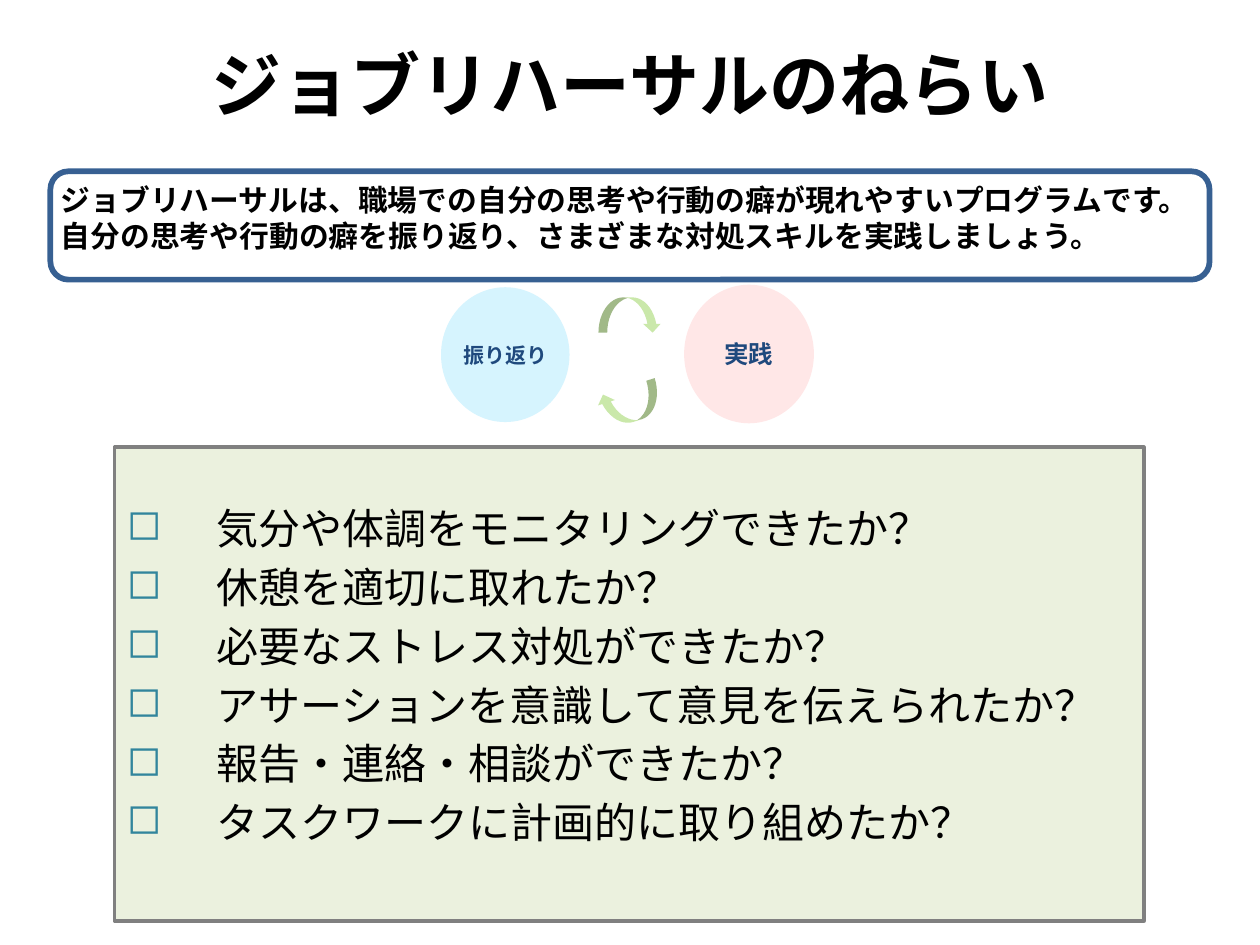
"""Build the job rehearsal aims slide."""
from dataclasses import dataclass

from lxml.etree import SubElement
from pptx import Presentation
from pptx.dml.color import RGBColor
from pptx.enum.shapes import MSO_SHAPE
from pptx.enum.text import MSO_ANCHOR, PP_ALIGN
from pptx.oxml.ns import qn
from pptx.util import Inches, Pt


@dataclass(frozen=True)
class Theme:
    font: str = "Noto Sans CJK JP"
    ink: str = "000000"
    navy: str = "1F497D"
    frame: str = "376092"
    white: str = "FFFFFF"
    panel: str = "EBF1DE"
    panel_line: str = "808080"
    bullet: str = "31859C"
    arrow: str = "CAE8AA"
    title_size: int = 40
    lead_size: int = 17
    check_size: int = 24


THEME = Theme()
TITLE = "ジョブリハーサルのねらい"
LEAD = [
    "ジョブリハーサルは、職場での自分の思考や行動の癖が現れやすいプログラムです。",
    "自分の思考や行動の癖を振り返り、さまざまな対処スキルを実践しましょう。",
]
CHECKS = [
    "気分や体調をモニタリングできたか？",
    "休憩を適切に取れたか？",
    "必要なストレス対処ができたか？",
    "アサーションを意識して意見を伝えられたか？",
    "報告・連絡・相談ができたか？",
    "タスクワークに計画的に取り組めたか？",
]
CIRCLES = [
    ("振り返り", (3.5, 2.28, 1.02, 1.07), "D6F4FE", 12),
    ("実践", (5.43, 2.26, 1.03, 1.1), "FFE7E7", 14),
]
ARROWS = [((4.75, 2.36, 0.5, 0.28), 0), ((4.75, 3.07, 0.5, 0.28), 162.3)]
CHECK_INDENT = 0.71


def add_box(slide, kind, bounds, fill, line=None, width=0):
    shape = slide.shapes.add_shape(kind, *map(Inches, bounds))
    shape.shadow.inherit = False
    shape.fill.solid()
    shape.fill.fore_color.rgb = RGBColor.from_string(fill)
    if line:
        shape.line.color.rgb = RGBColor.from_string(line)
        shape.line.width = Pt(width)
    else:
        shape.line.fill.background()
    return shape


def set_text(shape, lines, size, color, bold, align, anchor):
    frame = shape.text_frame
    frame.text = "\n".join(lines)
    frame.word_wrap = True
    frame.vertical_anchor = anchor
    for paragraph in frame.paragraphs:
        paragraph.alignment = align
        for run in paragraph.runs:
            run.font.size = Pt(size)
            run.font.bold = bold
            run.font.name = THEME.font
            run.font.color.rgb = RGBColor.from_string(color)
            SubElement(run.font._element, qn("a:ea"), typeface=THEME.font)
    return frame


def set_insets(frame, inset):
    frame.margin_left = frame.margin_right = Inches(inset)
    frame.margin_top = frame.margin_bottom = Inches(inset)


def add_bullet(paragraph):
    paragraph.space_before = Pt(THEME.check_size * 0.2)
    properties = paragraph._p.get_or_add_pPr()
    properties.set("marL", str(Inches(CHECK_INDENT)))
    properties.set("indent", str(-Inches(CHECK_INDENT)))
    color = SubElement(properties, qn("a:buClr"))
    SubElement(color, qn("a:srgbClr"), val=THEME.bullet)
    SubElement(properties, qn("a:buChar"), char="◻")


def add_checklist(slide):
    panel = add_box(slide, MSO_SHAPE.RECTANGLE, (0.91, 3.55, 8.17, 3.76),
                    THEME.panel, THEME.panel_line, 2)
    frame = set_text(panel, CHECKS, THEME.check_size, THEME.ink, False,
                     PP_ALIGN.LEFT, MSO_ANCHOR.TOP)
    frame.margin_top = Inches(0.44)
    for paragraph in frame.paragraphs:
        add_bullet(paragraph)


def add_title(slide):
    title = slide.shapes.title
    title.left, title.top, title.width, title.height = map(Inches, (0, 0.26, 10, 0.8))
    set_text(title, [TITLE], THEME.title_size, THEME.ink, True,
             PP_ALIGN.CENTER, MSO_ANCHOR.MIDDLE)


def add_lead(slide):
    lead = add_box(slide, MSO_SHAPE.ROUNDED_RECTANGLE, (0.4, 1.36, 9.2, 0.86),
                   THEME.white, THEME.frame, 3.25)
    frame = set_text(lead, LEAD, THEME.lead_size, THEME.ink, True,
                     PP_ALIGN.LEFT, MSO_ANCHOR.TOP)
    set_insets(frame, 0.04)


def add_cycle(slide):
    for label, bounds, fill, size in CIRCLES:
        circle = add_box(slide, MSO_SHAPE.OVAL, bounds, fill)
        frame = set_text(circle, [label], size, THEME.navy, True,
                         PP_ALIGN.CENTER, MSO_ANCHOR.MIDDLE)
        set_insets(frame, 0)
    for bounds, rotation in ARROWS:
        arrow = add_box(slide, MSO_SHAPE.CURVED_DOWN_ARROW, bounds, THEME.arrow)
        arrow.rotation = rotation


def main():
    presentation = Presentation()
    presentation.slide_width, presentation.slide_height = Inches(10), Inches(7.5)
    slide = presentation.slides.add_slide(presentation.slide_layouts[5])
    add_checklist(slide)
    add_title(slide)
    add_lead(slide)
    add_cycle(slide)
    presentation.save("out.pptx")


if __name__ == "__main__":
    main()
